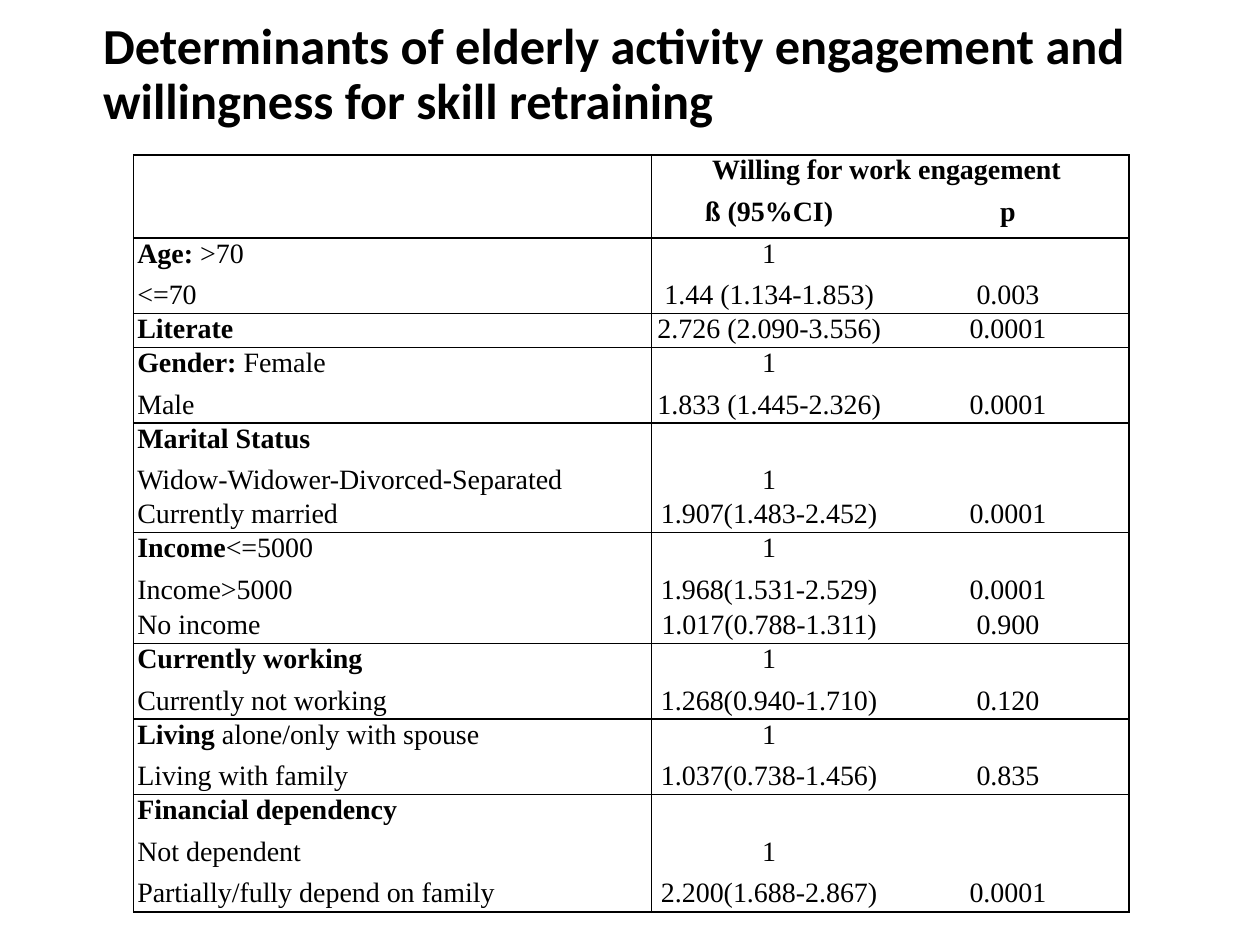
from dataclasses import dataclass
from lxml.etree import SubElement as Sub
from pptx import Presentation as Deck
from pptx.dml.color import RGBColor as Rgb
from pptx.enum.text import MSO_ANCHOR as Anchor, PP_ALIGN as Align
from pptx.oxml.ns import qn
from pptx.util import Inches, Pt

INK = "000000"
BODY = "Times New Roman"
TITLE = "Determinants of elderly activity engagement and willingness for skill retraining"


@dataclass(frozen=True)
class Row:
    bold: str = ""
    plain: str = ""
    beta: str = ""
    prob: str = ""
    high: float = 0.33


GROUPS = [
    [Row(beta="Willing for work engagement "), Row(beta="ß (95%CI)", prob="p")],
    [Row("Age: ", ">70", "1"), Row("", "<=70", "1.44 (1.134-1.853)", "0.003", 0.27)],
    [Row("Literate", "", "2.726 (2.090-3.556)", "0.0001", 0.27)],
    [Row("Gender: ", "Female", "1"),
     Row("", "Male", "1.833 (1.445-2.326)", "0.0001", 0.27)],
    [Row("Marital Status"),
     Row("", "Widow-Widower-Divorced-Separated", "1", "", 0.27),
     Row("", "Currently married", "1.907(1.483-2.452)", "0.0001", 0.27)],
    [Row("Income", "<=5000", "1"),
     Row("", "Income>5000", "1.968(1.531-2.529)", "0.0001", 0.28),
     Row("", "No income", "1.017(0.788-1.311)", "0.900", 0.27)],
    [Row("Currently working", "", "1"),
     Row("", "Currently not working", "1.268(0.940-1.710)", "0.120", 0.27)],
    [Row("Living", " alone/only with spouse", "1"),
     Row("", "Living with family", "1.037(0.738-1.456)", "0.835", 0.27)],
    [Row("Financial dependency"), Row("", "Not dependent", "1"),
     Row("", "Partially/fully depend on family", "2.200(1.688-2.867)", "0.0001", 0.27)],
]


def color(code: str) -> Rgb:
    return Rgb.from_string(code)


def add_run(para, text: str, bold: bool, size: float = 16, face: str = BODY) -> None:
    run = para.add_run()
    run.text = text
    font = run.font
    font.name, font.size, font.bold = face, Pt(size), bold
    font.color.rgb = color(INK)


def set_edge(cell, side: str, shown: bool) -> None:
    line = Sub(cell._tc.get_or_add_tcPr(), qn(f"a:ln{side}"), w=str(Pt(1)))
    if shown:
        fill = Sub(line, qn("a:solidFill"))
        Sub(fill, qn("a:srgbClr"), val=INK)
    else:
        Sub(line, qn("a:noFill"))


def fill_cell(cell, parts: list[tuple[str, bool]], edges: dict[str, bool],
              align: Align) -> None:
    cell.margin_left = cell.margin_right = Inches(0.03)
    cell.margin_top = cell.margin_bottom = 0
    for side, shown in edges.items():
        set_edge(cell, side, shown)
    cell.fill.background()
    para = cell.text_frame.paragraphs[0]
    para.alignment = align
    for text, bold in parts:
        if text:
            add_run(para, text, bold)
    if not para.runs:
        Sub(para._p, qn("a:endParaRPr"), sz="1600")


def draw_title(slide) -> None:
    box = slide.shapes.add_textbox(Inches(0.72), Inches(0.14), Inches(8.99), Inches(0.92))
    frame = box.text_frame
    frame.word_wrap = True
    frame.vertical_anchor = Anchor.MIDDLE
    para = frame.paragraphs[0]
    para.line_spacing = 0.9
    add_run(para, TITLE, True, 28.8, "Calibri")


def draw_table(slide) -> None:
    rows = [row for group in GROUPS for row in group]
    widths = [4.11, 1.87, 1.92]
    shape = slide.shapes.add_table(
        len(rows), len(widths), Inches(1.06), Inches(1.23),
        Inches(sum(widths)), Inches(sum(row.high for row in rows)))
    table = shape.table
    table.first_row = table.horz_banding = False
    for col, width in zip(table.columns, widths):
        col.width = Inches(width)
    table.cell(0, 1).merge(table.cell(0, 2))
    num = 0
    for group in GROUPS:
        head = group is GROUPS[0]
        for pos, row in enumerate(group):
            table.rows[num].height = Inches(row.high)
            cells = [[(row.bold, True), (row.plain, False)],
                     [(row.beta, head)], [(row.prob, head)]]
            for col, parts in enumerate(cells):
                edges = {"L": col < 2, "R": col != 1 or num == 0,
                         "T": pos == 0, "B": pos == len(group) - 1}
                align = Align.CENTER if col else Align.LEFT
                fill_cell(table.cell(num, col), parts, edges, align)
            num += 1


def main() -> None:
    deck = Deck()
    deck.slide_width, deck.slide_height = Inches(10), Inches(7.5)
    slide = deck.slides.add_slide(deck.slide_layouts[6])
    draw_title(slide)
    draw_table(slide)
    deck.save("out.pptx")


if __name__ == "__main__":
    main()
